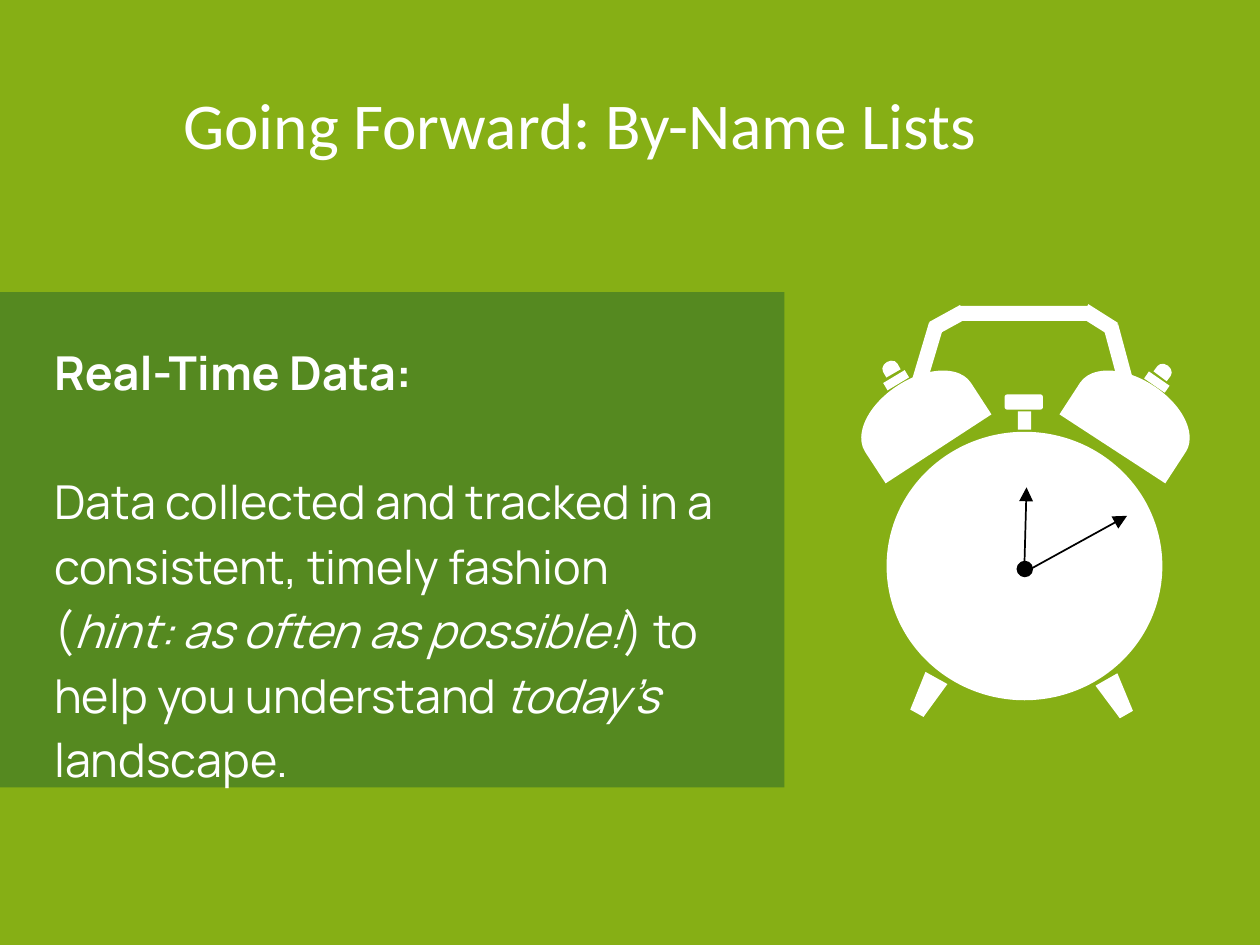
from dataclasses import dataclass

from lxml import etree
from pptx import Presentation
from pptx.dml.color import RGBColor
from pptx.enum.shapes import MSO_CONNECTOR, MSO_SHAPE
from pptx.enum.text import MSO_ANCHOR, MSO_AUTO_SIZE, PP_ALIGN
from pptx.oxml.ns import qn
from pptx.util import Cm, Pt

RECT, OVAL = MSO_SHAPE.RECTANGLE, MSO_SHAPE.OVAL
ROUNDED, DOME = MSO_SHAPE.ROUNDED_RECTANGLE, MSO_SHAPE.FLOWCHART_DELAY
FOOT = MSO_SHAPE.FLOWCHART_MANUAL_OPERATION
TOP, LEFT, NO_FIT = MSO_ANCHOR.TOP, PP_ALIGN.LEFT, MSO_AUTO_SIZE.NONE
STRAIGHT = MSO_CONNECTOR.STRAIGHT


@dataclass(frozen=True)
class Theme:
    lime: RGBColor = RGBColor(0x86, 0xAF, 0x15)
    forest: RGBColor = RGBColor(0x55, 0x89, 0x20)
    white: RGBColor = RGBColor(0xFF, 0xFF, 0xFF)
    black: RGBColor = RGBColor(0, 0, 0)
    title_font: str = "Calibri"
    body_font: str = "Manrope"
    title_size: Pt = Pt(28)
    body_size: Pt = Pt(20)
    paragraph_gap: Pt = Pt(27.6)
    hand_width: Pt = Pt(0.75)


THEME = Theme()

# Runs are (text, bold, italic).
TITLE = [[("Going Forward: By-Name Lists", False, False)]]
BODY = [
    [("Real-Time Data:", True, False)],
    [
        ("Data collected and tracked in a consistent, timely fashion (", False, False),
        ("hint: as often as possible!", False, True),
        (") to help you understand ", False, False),
        ("today’s", False, True),
        (" landscape.", False, False),
    ],
]

# Boxes are left, top, width, height in cm.
PANEL_BOX = (0, 4.42, 11.86, 7.49)
TITLE_BOX = (2.59, 1.1, 14.05, 1.9)
BODY_BOX = (0.64, 4.9, 10.59, 2.69)
INSET = Cm(0.18)

# Clock parts: shape, width, height, then (centre x, centre y, rotation) per place.
CLOCK_PARTS = [
    (OVAL, 4.17, 4.06, [(15.49, 8.56, 0)]),                             # face
    (DOME, 1.14, 1.91, [(13.88, 6.31, 236.9), (17.13, 6.31, 303.1)]),   # bells
    (RECT, 0.38, 0.13, [(13.55, 5.75, 329), (17.49, 5.78, 34.7)]),      # bell studs
    (DOME, 0.2, 0.25, [(13.46, 5.56, 239.8), (17.6, 5.61, 306.8)]),     # bell knobs
    (RECT, 0.2, 0.28, [(15.49, 6.36, 0)]),                              # button stem
    (ROUNDED, 0.58, 0.23, [(15.48, 6.08, 0)]),                          # button
    (RECT, 0.53, 0.23, [(14.34, 4.84, 331.2), (16.62, 4.84, 32.3)]),    # handle corners
    (RECT, 0.97, 0.23, [(14.02, 5.37, 286.6), (16.92, 5.4, 74.9)]),     # handle sides
    (RECT, 1.96, 0.23, [(15.48, 4.74, 0)]),                             # handle top
    (FOOT, 0.38, 0.61, [(14.01, 10.52, 29), (16.88, 10.54, 330.4)]),    # feet
]
PIVOT_BOX = (15.37, 8.48, 0.25, 0.25)
CLOCK_HANDS = [(15.49, 8.48, 15.52, 7.37), (15.57, 8.61, 17.04, 7.8)]


def add_solid(slide, kind, box, color, rotation=0):
    solid = slide.shapes.add_shape(kind, *map(Cm, box))
    solid.shadow.inherit = False
    solid.fill.solid()
    solid.fill.fore_color.rgb = color
    solid.line.fill.background()
    solid.rotation = rotation


def add_hand(slide, ends):
    hand = slide.shapes.add_connector(STRAIGHT, *map(Cm, ends))
    hand.line.color.rgb = THEME.black
    hand.line.width = THEME.hand_width
    etree.SubElement(hand.line._get_or_add_ln(), qn("a:tailEnd"), type="triangle")
    etree.SubElement(hand._element.spPr, qn("a:effectLst"))


def write_text(holder, box, paragraphs, font, size, spacing):
    holder.left, holder.top, holder.width, holder.height = map(Cm, box)
    frame = holder.text_frame
    frame.word_wrap = True
    frame.auto_size = NO_FIT
    frame.vertical_anchor = TOP
    frame.margin_left = frame.margin_right = INSET
    frame.margin_top = frame.margin_bottom = INSET
    for index, runs in enumerate(paragraphs):
        paragraph = frame.add_paragraph() if index else frame.paragraphs[0]
        paragraph.alignment = LEFT
        paragraph.line_spacing = spacing
        paragraph.space_before = THEME.paragraph_gap if index else Pt(0)
        for text, bold, italic in runs:
            run = paragraph.add_run()
            run.text = text
            run.font.name = font
            run.font.size = size
            run.font.bold = bold
            run.font.italic = italic
            run.font.color.rgb = THEME.white


def add_clock(slide):
    for kind, width, height, places in CLOCK_PARTS:
        for x, y, rotation in places:
            box = (x - width / 2, y - height / 2, width, height)
            add_solid(slide, kind, box, THEME.white, rotation)
    add_solid(slide, OVAL, PIVOT_BOX, THEME.black)
    for ends in CLOCK_HANDS:
        add_hand(slide, ends)


def main():
    deck = Presentation()
    deck.slide_width, deck.slide_height = Cm(19.05), Cm(14.29)
    slide = deck.slides.add_slide(deck.slide_layouts.get_by_name("Title Only"))
    slide.background.fill.solid()
    slide.background.fill.fore_color.rgb = THEME.lime

    add_solid(slide, RECT, PANEL_BOX, THEME.forest)
    write_text(slide.shapes.title, TITLE_BOX, TITLE,
               THEME.title_font, THEME.title_size, 1.0)
    body = slide.shapes.add_textbox(*map(Cm, BODY_BOX))
    write_text(body, BODY_BOX, BODY, THEME.body_font, THEME.body_size, 1.15)
    add_clock(slide)
    deck.save("out.pptx")


if __name__ == "__main__":
    main()
